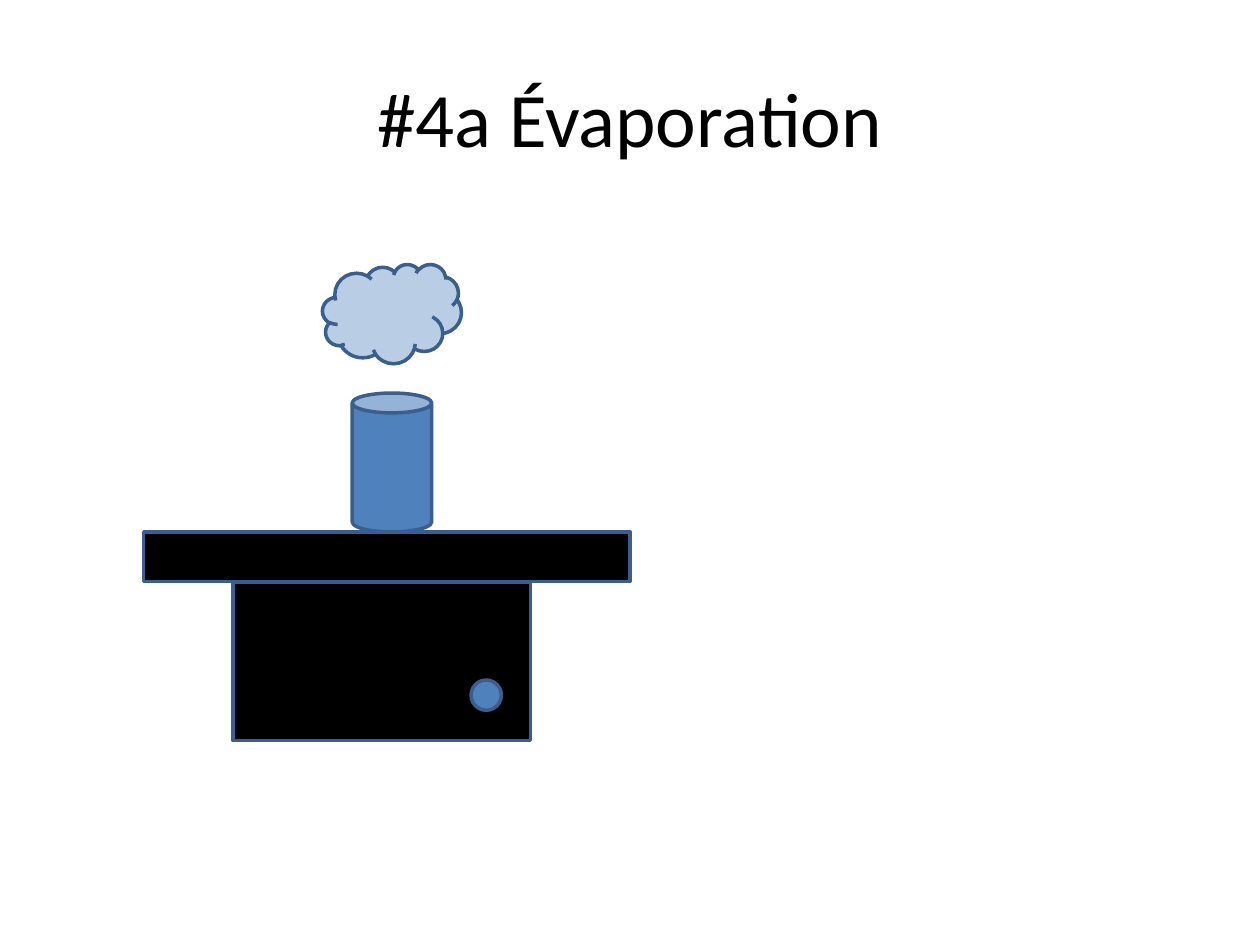
from pptx import Presentation
from pptx.dml.color import RGBColor
from pptx.enum.shapes import MSO_SHAPE
from pptx.enum.text import MSO_ANCHOR, PP_ALIGN
from pptx.util import Pt


def color(code):
    return RGBColor.from_string(code)


class Page:
    """Holds the style and the current slide."""
    font = "Calibri"
    ink = "000000"
    edge = "3A5F8C"
    width = 2

    def __init__(self, deck):
        self.slide = deck.slides.add_slide(deck.slide_layouts[5])

    def title(self, text, left, top, width, height, size):
        box = self.slide.shapes.title
        box.left, box.top = Pt(left), Pt(top)
        box.width, box.height = Pt(width), Pt(height)
        frame = box.text_frame
        frame.text = text
        frame.vertical_anchor = MSO_ANCHOR.MIDDLE
        line = frame.paragraphs[0]
        line.alignment = PP_ALIGN.CENTER
        font = line.runs[0].font
        font.name, font.size = self.font, Pt(size)
        font.color.rgb = color(self.ink)

    def shape(self, kind, left, top, width, height, fill):
        item = self.slide.shapes.add_shape(
            kind, Pt(left), Pt(top), Pt(width), Pt(height))
        item.shadow.inherit = False
        item.fill.solid()
        item.fill.fore_color.rgb = color(fill)
        item.line.color.rgb = color(self.edge)
        item.line.width = Pt(self.width)


def main():
    deck = Presentation()
    deck.slide_width, deck.slide_height = Pt(720), Pt(540)
    page = Page(deck)
    black, blue, pale = "000000", "4F81BD", "B9CDE5"

    page.title("#4a Évaporation", 36, 21.6, 648, 90, 44)

    # Stove, plate and knob
    page.shape(MSO_SHAPE.RECTANGLE, 133.2, 332.6, 170, 90.7, black)
    page.shape(MSO_SHAPE.RECTANGLE, 82.1, 304, 278, 28.3, black)
    page.shape(MSO_SHAPE.OVAL, 269.2, 388.6, 17.3, 17.3, blue)

    # Pot and steam
    page.shape(MSO_SHAPE.CAN, 201.3, 224.6, 45.4, 79.4, blue)
    page.shape(MSO_SHAPE.CLOUD, 184.3, 151, 79.4, 56.7, pale)

    deck.save("out.pptx")


if __name__ == "__main__":
    main()
